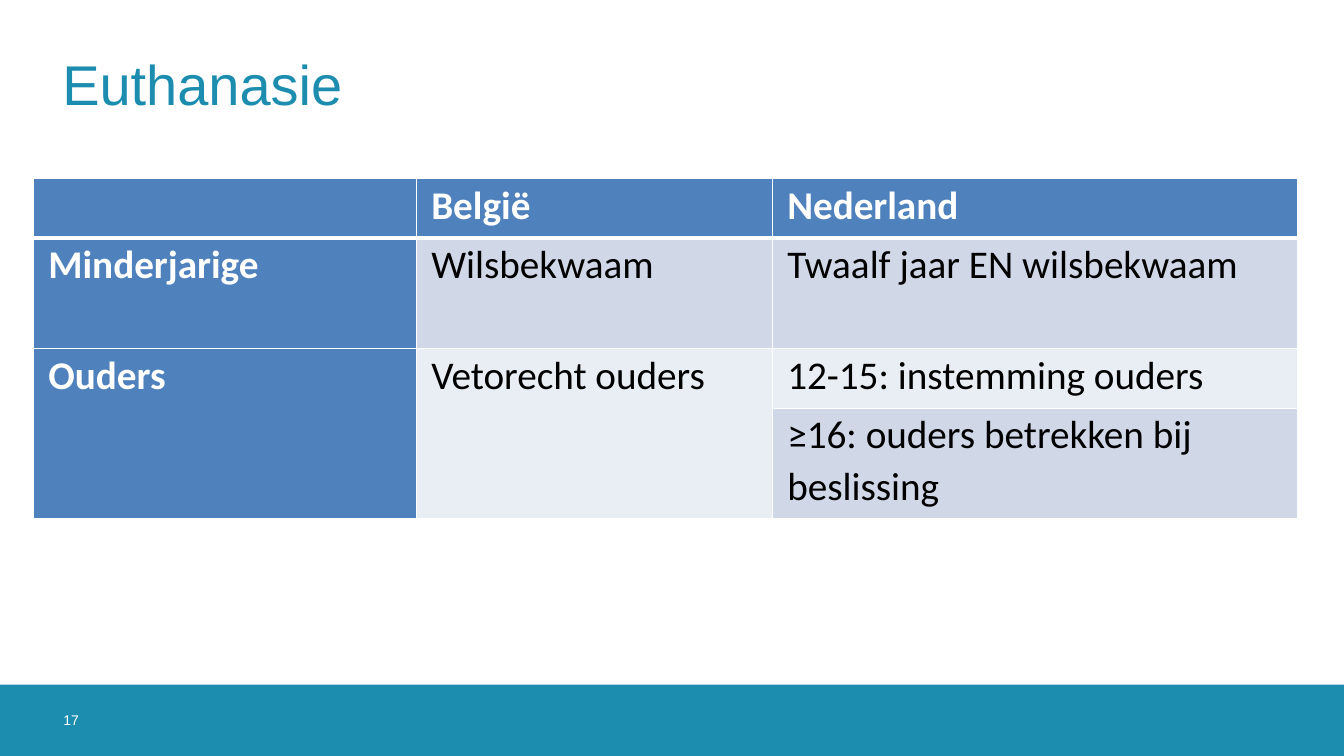
"""Build the slide that compares the rules for minors in two countries."""
from lxml.etree import SubElement
from pptx import Presentation
from pptx.dml.color import RGBColor
from pptx.enum.shapes import MSO_SHAPE as Kind
from pptx.oxml.ns import qn
from pptx.util import Cm, Pt

WHITE, BLACK, TEAL, BLUE = "FFFFFF", "000000", "1D8DAF", "4F81BD"
DARK, LIGHT = "D0D8E8", "E9EDF4"


def paint(item, tint):
    item.solid()
    item.fore_color.rgb = RGBColor.from_string(tint)


def write(frame, text, face, size, tint, bold=False):
    frame.word_wrap = True
    par = frame.paragraphs[0]
    run = par.add_run()
    run.text = text
    run.font.name, run.font.size, run.font.bold = face, Pt(size), bold
    paint(run.font.fill, tint)
    return par


deck = Presentation()
deck.slide_width, deck.slide_height = Cm(33.87), Cm(19.05)
slide = deck.slides.add_slide(deck.slide_layouts[6])
paint(slide.background.fill, WHITE)

bar = slide.shapes.add_shape(Kind.RECTANGLE, 0, Cm(17.25), Cm(33.87), Cm(1.8))
bar.shadow.inherit = False
paint(bar.fill, TEAL)
bar.line.fill.background()

labels = [
    ("17", 1.5, 17.93, 0.61, 0.46, 10, WHITE, 0.1),
    ("Euthanasie", 1.57, 1.24, 30.73, 1.75, 40, TEAL, 0),
]
for text, left, top, wide, high, size, tint, inset in labels:
    box = slide.shapes.add_textbox(Cm(left), Cm(top), Cm(wide), Cm(high))
    frame = box.text_frame
    frame.margin_left = Cm(inset)
    frame.margin_top = frame.margin_right = frame.margin_bottom = 0
    write(frame, text, "Arial", size, tint)

rows = [
    ("", "België", "Nederland"),
    ("Minderjarige", "Wilsbekwaam", "Twaalf jaar EN wilsbekwaam"),
    ("Ouders", "Vetorecht ouders", "12-15: instemming ouders"),
    ("", "", "≥16: ouders betrekken bij beslissing"),
]
widths, heights = (9.65, 8.97, 13.23), (1.5, 2.79, 1.5, 2.79)
table = slide.shapes.add_table(
    4, 3, Cm(0.84), Cm(4.5), Cm(sum(widths)), Cm(sum(heights))).table
for col, wide in zip(table.columns, widths):
    col.width = Cm(wide)
for row, high in zip(table.rows, heights):
    row.height = Cm(high)

for r, row in enumerate(rows):
    for c, text in enumerate(row):
        cell = table.cell(r, c)
        cell.margin_left = cell.margin_right = Cm(0.38)
        cell.margin_top = cell.margin_bottom = 0
        props = cell._tc.get_or_add_tcPr()
        for side in "LRTB":
            thick = (r, side) in ((0, "B"), (1, "T"))
            edge = SubElement(props, qn("a:ln" + side), w=str(Pt(3 if thick else 1)))
            fill = SubElement(edge, qn("a:solidFill"))
            SubElement(fill, qn("a:srgbClr"), val=WHITE)
        head = r == 0 or c == 0
        paint(cell.fill, BLUE if head else DARK if r % 2 else LIGHT)
        if text:
            par = write(cell.text_frame, text, "Calibri", 28,
                        WHITE if head else BLACK, head)
            par.line_spacing, par.space_after = 1.07, Pt(8)

for c in range(2):
    table.cell(2, c).merge(table.cell(3, c))

deck.save("out.pptx")
